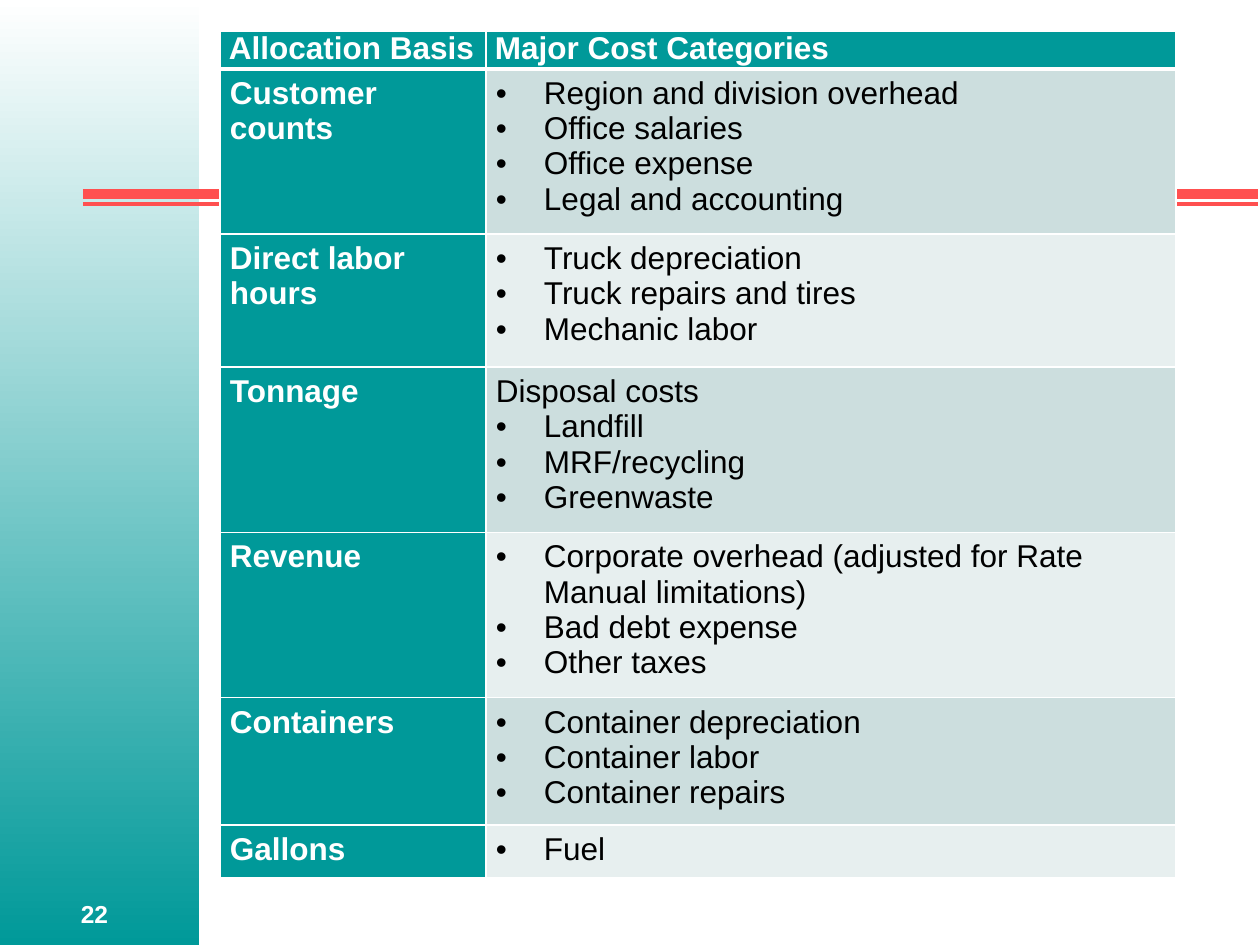
from lxml.etree import SubElement as Sub
from pptx import Presentation
from pptx.dml.color import RGBColor as Rgb
from pptx.enum.shapes import MSO_CONNECTOR as Link, MSO_SHAPE as Kind
from pptx.enum.text import MSO_ANCHOR as Anchor, PP_ALIGN as Align
from pptx.oxml.ns import qn
from pptx.util import Emu, Pt

# Content: heading, plain lead lines, bulleted items, row height
HEAD = ("Allocation Basis", "Major Cost Categories")
ROWS = [
    ("Customer counts", [], ["Region and division overhead", "Office salaries",
                             "Office expense", "Legal and accounting"], 155),
    ("Direct labor hours", [], ["Truck depreciation", "Truck repairs and tires",
                                "Mechanic labor"], 133),
    ("Tonnage", ["Disposal costs"], ["Landfill", "MRF/recycling", "Greenwaste"], 155),
    ("Revenue", [], ["Corporate overhead (adjusted for Rate Manual limitations)",
                     "Bad debt expense", "Other taxes"], 155),
    ("Containers", [], ["Container depreciation", "Container labor",
                        "Container repairs"], 121),
    ("Gallons", [], ["Fuel"], 53),
]
PAGE = "22"

# Format
HUE = {"teal": "009999", "red": "FF5050", "white": "FFFFFF", "black": "000000",
       "dark": "CCDEDE", "light": "E7EFEF"}
FACE = "Arial"
COLS = (266, 690)
HEAD_H = 35
INDENT = 48
RULES = [(204, 2), (194, 6)]
BOLD = {"name": FACE, "size": Pt(18), "bold": True}
BODY = {**BOLD, "bold": False}
SMALL = {**BOLD, "size": Pt(14)}


def px(n):
    return Emu(round(n * 914400 / 126))


def rgb(key):
    return Rgb.from_string(HUE[key])


def style(font, fmt, hue):
    for key, val in fmt.items():
        setattr(font, key, val)
    font.color.rgb = rgb(hue)


def add_run(para, text, fmt, hue):
    run = para.add_run()
    run.text = text
    style(run.font, fmt, hue)
    # The paragraph end sets the line height too
    end = Sub(para._p, qn("a:endParaRPr"), sz=str(int(fmt["size"].pt * 100)))
    Sub(end, qn("a:latin"), typeface=FACE)


def bullet(para):
    prop = para._p.get_or_add_pPr()
    prop.set("marL", str(px(INDENT)))
    prop.set("indent", str(-px(INDENT)))
    Sub(prop, qn("a:buFont"), typeface=FACE)
    Sub(prop, qn("a:buChar"), char="•")


def border(cell, base):
    prop = cell._tc.get_or_add_tcPr()
    for side, wide in zip("LRTB", (1, 1, 1, base)):
        edge = Sub(prop, qn("a:ln" + side), w=str(Pt(wide)))
        Sub(Sub(edge, qn("a:solidFill")), qn("a:srgbClr"), val=HUE["white"])


def fill_cell(cell, lines, fmt, hue, back, top=False):
    side, end = (9, 0) if top else (10, 7)
    cell.margin_left = cell.margin_right = px(side)
    cell.margin_top = cell.margin_bottom = px(end)
    border(cell, 3 if top else 1)
    cell.fill.solid()
    cell.fill.fore_color.rgb = rgb(back)
    frame = cell.text_frame
    for i, (text, dot) in enumerate(lines):
        para = frame.add_paragraph() if i else frame.paragraphs[0]
        if dot:
            bullet(para)
        add_run(para, text, fmt, hue)


deck = Presentation()
deck.slide_width, deck.slide_height = px(1260), px(945)
slide = deck.slides.add_slide(deck.slide_layouts[6])
shapes = slide.shapes

# Default typeface
for root in (deck.element, deck.slide_master.element):
    for face in root.iter(qn("a:latin")):
        face.set("typeface", FACE)

# Side band
band = shapes.add_shape(Kind.RECTANGLE, 0, 0, px(199), px(945))
band.shadow.inherit = False
band.line.fill.background()
band.fill.gradient()
band.fill.gradient_angle = 270
for stop, hue in zip(band.fill.gradient_stops, ("white", "teal")):
    stop.color.rgb = rgb(hue)

# Double rule
for y, wide in RULES:
    rule = shapes.add_connector(Link.STRAIGHT, px(83), px(y), px(1258), px(y))
    rule.line.color.rgb = rgb("red")
    rule.line.width = Pt(wide)
    Sub(rule._element.spPr, qn("a:effectLst"))

# Page number
box = shapes.add_textbox(0, px(882), px(189), px(63))
box.text_frame.word_wrap = False
box.text_frame.vertical_anchor = Anchor.MIDDLE
para = box.text_frame.paragraphs[0]
para.alignment = Align.CENTER
add_run(para, PAGE, SMALL, "white")

# Cost table, without a table style
tall = [HEAD_H] + [row[-1] for row in ROWS]
table = shapes.add_table(len(tall), len(COLS), px(220), px(31),
                         px(sum(COLS)), px(sum(tall))).table
prop = table._tbl.tblPr
prop.remove(prop.find(qn("a:tableStyleId")))
for col, wide in zip(table.columns, COLS):
    col.width = px(wide)
for row, high in zip(table.rows, tall):
    row.height = px(high)
for c, text in enumerate(HEAD):
    fill_cell(table.cell(0, c), [(text, False)], BOLD, "white", "teal", top=True)
for r, (basis, leads, items, _) in enumerate(ROWS, 1):
    lines = [(t, False) for t in leads] + [(t, True) for t in items]
    fill_cell(table.cell(r, 0), [(basis, False)], BOLD, "white", "teal")
    fill_cell(table.cell(r, 1), lines, BODY, "black", "dark" if r % 2 else "light")

deck.save("out.pptx")
